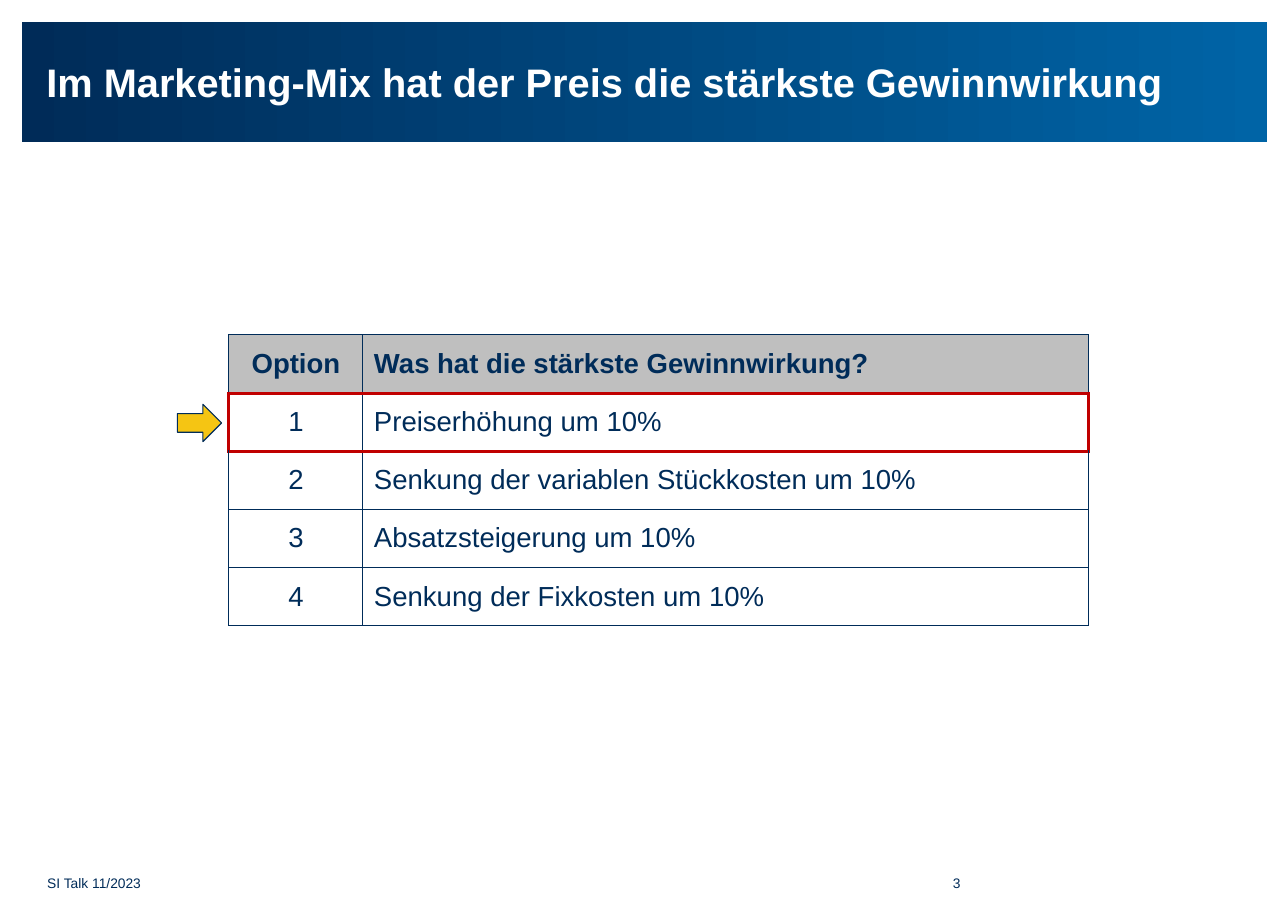
from dataclasses import dataclass

from lxml import etree
from pptx import Presentation
from pptx.dml.color import RGBColor
from pptx.enum.shapes import MSO_SHAPE
from pptx.enum.text import MSO_ANCHOR, PP_ALIGN
from pptx.oxml.ns import qn
from pptx.util import Cm, Pt

RECTANGLE, RIGHT_ARROW = MSO_SHAPE.RECTANGLE, MSO_SHAPE.RIGHT_ARROW
LEFT, CENTER, RIGHT = PP_ALIGN.LEFT, PP_ALIGN.CENTER, PP_ALIGN.RIGHT
MIDDLE = MSO_ANCHOR.MIDDLE


@dataclass(frozen=True)
class Theme:
    font: str = "Arial"
    navy: str = "002C59"
    banner_start: str = "002B58"
    banner_end: str = "0064A6"
    white: str = "FFFFFF"
    header_gray: str = "BFBFBF"
    highlight_red: str = "C00000"
    arrow_yellow: str = "F5C513"
    title_size: float = 26
    table_size: float = 18
    footer_size: float = 9
    thin: float = 0.75
    thick: float = 2.25


def rgb(color):
    return RGBColor.from_string(color)


class SlideBuilder:
    def __init__(self, slide, theme):
        self.shapes = slide.shapes
        self.theme = theme

    def style_text(self, frame, text, size, color, bold=False, align=LEFT):
        frame.text = text
        paragraph = frame.paragraphs[0]
        paragraph.alignment = align
        font = paragraph.runs[0].font
        font.name, font.size, font.bold = self.theme.font, Pt(size), bold
        font.color.rgb = rgb(color)

    def label(self, box, text, size, color, **style):
        frame = self.shapes.add_textbox(*map(Cm, box)).text_frame
        frame.word_wrap = True
        frame.vertical_anchor = MIDDLE
        frame.margin_left = frame.margin_right = 0
        frame.margin_top = frame.margin_bottom = 0
        self.style_text(frame, text, size, color, **style)

    def banner(self, box):
        band = self.shapes.add_shape(RECTANGLE, *map(Cm, box))
        band.shadow.inherit = False
        band.line.fill.background()
        band.fill.gradient()
        band.fill.gradient_angle = 0
        ends = (self.theme.banner_start, self.theme.banner_end)
        for stop, color in zip(band.fill.gradient_stops, ends):
            stop.color.rgb = rgb(color)

    def arrow(self, box):
        pointer = self.shapes.add_shape(RIGHT_ARROW, *map(Cm, box))
        pointer.shadow.inherit = False
        pointer.fill.solid()
        pointer.fill.fore_color.rgb = rgb(self.theme.arrow_yellow)
        pointer.line.color.rgb = rgb(self.theme.navy)
        pointer.line.width = Pt(self.theme.thin)

    def cell_borders(self, cell, red_sides):
        """Draw all four borders, those in red_sides thick and red."""
        properties = cell._tc.get_or_add_tcPr()
        for position, side in enumerate("LRTB"):
            red = side in red_sides
            width = self.theme.thick if red else self.theme.thin
            color = self.theme.highlight_red if red else self.theme.navy
            line = etree.Element(qn(f"a:ln{side}"), w=str(Pt(width)))
            fill = etree.SubElement(line, qn("a:solidFill"))
            etree.SubElement(fill, qn("a:srgbClr"), val=color)
            properties.insert(position, line)

    def options_table(self, left, top, widths, row_height, rows, winner):
        """Build the table and frame the row with index winner in red."""
        frame = self.shapes.add_table(
            len(rows), len(widths), Cm(left), Cm(top),
            Cm(sum(widths)), Cm(row_height * len(rows)))
        table = frame.table
        for column, width in zip(table.columns, widths):
            column.width = Cm(width)
        red_sides = {winner - 1: "B", winner: "TB", winner + 1: "T"}
        for r, texts in enumerate(rows):
            table.rows[r].height = Cm(row_height)
            for c, text in enumerate(texts):
                cell = table.cell(r, c)
                cell.vertical_anchor = MIDDLE
                self.style_text(cell.text_frame, text, self.theme.table_size,
                                self.theme.navy, bold=r == 0,
                                align=CENTER if c == 0 else LEFT)
                if r == 0:
                    cell.fill.solid()
                    cell.fill.fore_color.rgb = rgb(self.theme.header_gray)
                else:
                    cell.fill.background()
                outer = ("L" if c == 0 else "R") if r == winner else ""
                self.cell_borders(cell, red_sides.get(r, "") + outer)


def main():
    deck = Presentation()
    deck.slide_width, deck.slide_height = Cm(29.7), Cm(21)
    theme = Theme()
    page = SlideBuilder(deck.slides.add_slide(deck.slide_layouts[6]), theme)

    page.banner((0.51, 0.51, 28.7, 2.77))
    page.label((1.07, 0.71, 27.58, 2.34),
               "Im Marketing-Mix hat der Preis die stärkste Gewinnwirkung",
               theme.title_size, theme.white, bold=True)
    page.label((19.94, 20.17, 2.21, 0.38), "3",
               theme.footer_size, theme.navy, align=RIGHT)
    page.label((1.09, 20.17, 4.19, 0.38), "SI Talk 11/2023",
               theme.footer_size, theme.navy)

    options = [
        ("Option", "Was hat die stärkste Gewinnwirkung?"),
        ("1", "Preiserhöhung um 10%"),
        ("2", "Senkung der variablen Stückkosten um 10%"),
        ("3", "Absatzsteigerung um 10%"),
        ("4", "Senkung der Fixkosten um 10%"),
    ]
    page.options_table(5.28, 7.72, (3.09, 16.72), 1.34, options, winner=1)
    page.arrow((4.09, 9.32, 1.02, 0.86))

    deck.save("out.pptx")


if __name__ == "__main__":
    main()
